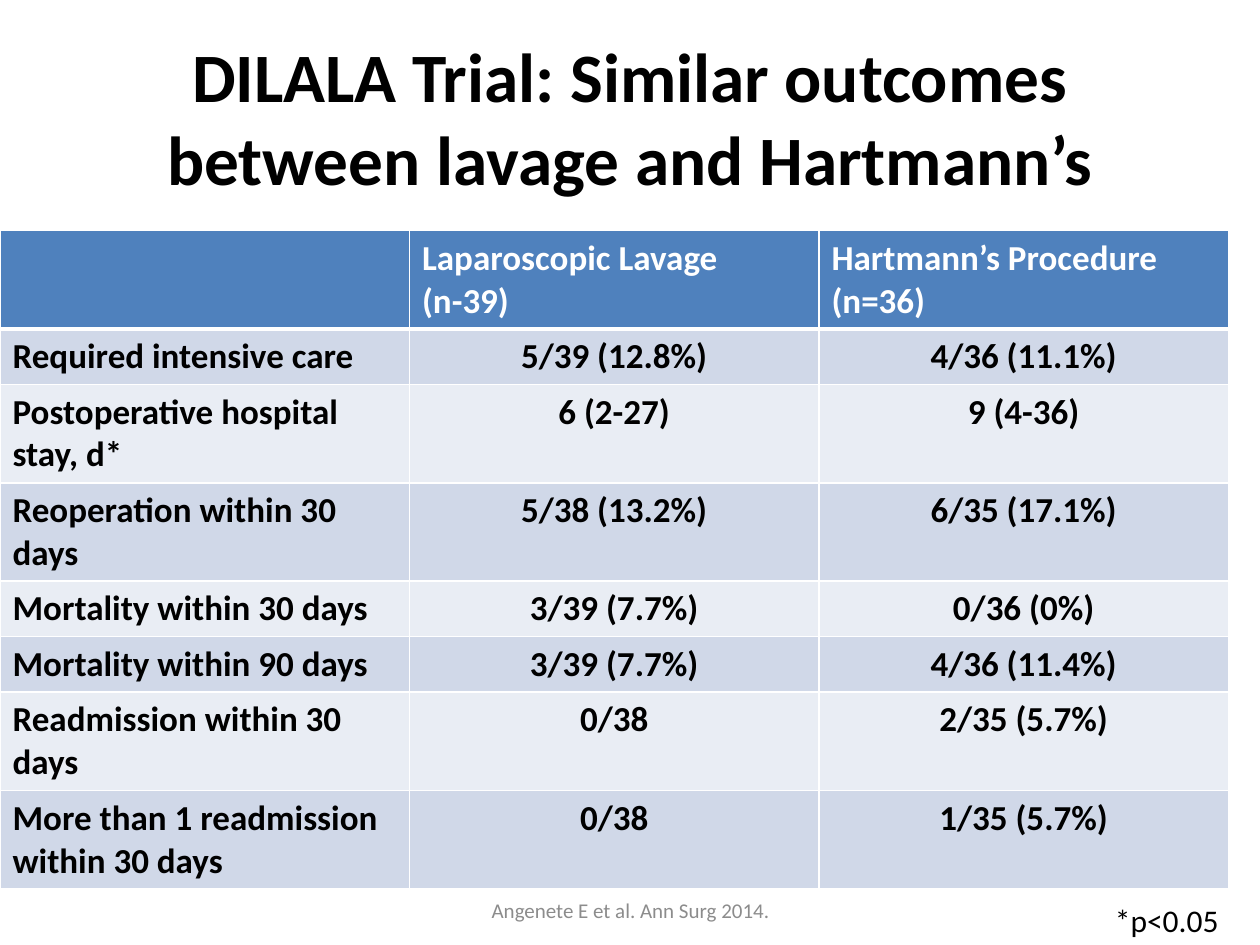
from lxml import etree
from pptx import Presentation
from pptx import util as u
from pptx.dml import color
from pptx.enum import text
from pptx.oxml import ns

FONT = "Calibri"
HEADER_FILL = "4F81BD"
BAND_FILLS = ("D0D8E8", "E9EDF4")
OUTCOMES = [
    ("", "Laparoscopic Lavage (n-39)", "Hartmann’s Procedure (n=36)"),
    ("Required intensive care", "5/39 (12.8%)", "4/36 (11.1%)"),
    ("Postoperative hospital stay, d*", "6 (2-27)", "9 (4-36)"),
    ("Reoperation within 30 days", "5/38 (13.2%)", "6/35 (17.1%)"),
    ("Mortality within 30 days", "3/39 (7.7%)", "0/36 (0%)"),
    ("Mortality within 90 days", "3/39 (7.7%)", "4/36 (11.4%)"),
    ("Readmission within 30 days", "0/38", "2/35 (5.7%)"),
    ("More than 1 readmission within 30 days", "0/38", "1/35 (5.7%)"),
]


def rgb(value):
    return color.RGBColor.from_string(value)


def set_attributes(target, values):
    for name, value in values.items():
        setattr(target, name, value)


def write(frame, content, size, fill, bold=False, align=text.PP_ALIGN.LEFT):
    paragraph = frame.paragraphs[0]
    paragraph.alignment = align
    run = paragraph.add_run()
    run.text = content
    set_attributes(run.font, {"name": FONT, "size": u.Pt(size), "bold": bold})
    run.font.color.rgb = rgb(fill)


def add_title(slide, content):
    title = slide.shapes.title
    set_attributes(title, {
        "left": u.Inches(0.5), "top": u.Inches(0.3),
        "width": u.Inches(9), "height": u.Inches(1.25),
    })
    set_attributes(title.text_frame, {
        "auto_size": text.MSO_AUTO_SIZE.NONE,
        "vertical_anchor": text.MSO_ANCHOR.MIDDLE,
    })
    write(title.text_frame, content, 39.6, "000000", True, text.PP_ALIGN.CENTER)


def add_note(slide, content, box, size, fill, align, frame_format):
    shape = slide.shapes.add_textbox(*map(u.Inches, box))
    set_attributes(shape.text_frame, frame_format)
    write(shape.text_frame, content, size, fill, align=align)


def add_borders(cell, widths):
    properties = cell._tc.get_or_add_tcPr()
    for edge, width in widths.items():
        line = etree.SubElement(properties, ns.qn(f"a:ln{edge}"), w=str(u.Pt(width)))
        solid = etree.SubElement(line, ns.qn("a:solidFill"))
        etree.SubElement(solid, ns.qn("a:srgbClr"), val="FFFFFF")


def format_cell(cell, content, row, column):
    header = row == 0
    add_borders(cell, {"L": 1, "R": 1, "T": 3 if row == 1 else 1, "B": 3 if header else 1})
    cell.fill.solid()
    cell.fill.fore_color.rgb = rgb(HEADER_FILL if header else BAND_FILLS[(row - 1) % 2])
    if content:
        centred = column > 0 and not header
        align = text.PP_ALIGN.CENTER if centred else text.PP_ALIGN.LEFT
        write(cell.text_frame, content, 20, "FFFFFF" if header else "000000", True, align)


def add_outcomes_table(slide):
    rows, columns = len(OUTCOMES), len(OUTCOMES[0])
    table = slide.shapes.add_table(
        rows, columns, u.Inches(0), u.Inches(1.83),
        u.Inches(3.25 * columns), u.Inches(0.41 * rows)).table
    for row, values in enumerate(OUTCOMES):
        for column, content in enumerate(values):
            format_cell(table.cell(row, column), content, row, column)


def main():
    presentation = Presentation()
    set_attributes(presentation, {"slide_width": u.Inches(10), "slide_height": u.Inches(7.5)})
    slide = presentation.slides.add_slide(presentation.slide_layouts[5])
    add_title(slide, "DILALA Trial: Similar outcomes between lavage and Hartmann’s")
    add_outcomes_table(slide)
    add_note(slide, "Angenete E et al. Ann Surg 2014.", (3.42, 6.95, 3.17, 0.55), 12,
             "8C8C8C", text.PP_ALIGN.CENTER,
             {"word_wrap": True, "vertical_anchor": text.MSO_ANCHOR.MIDDLE})
    add_note(slide, "*p<0.05", (8.75, 7.1, 1.03, 0.4), 18, "000000", text.PP_ALIGN.LEFT,
             {"word_wrap": False, "auto_size": text.MSO_AUTO_SIZE.SHAPE_TO_FIT_TEXT})
    presentation.save("out.pptx")


main()
